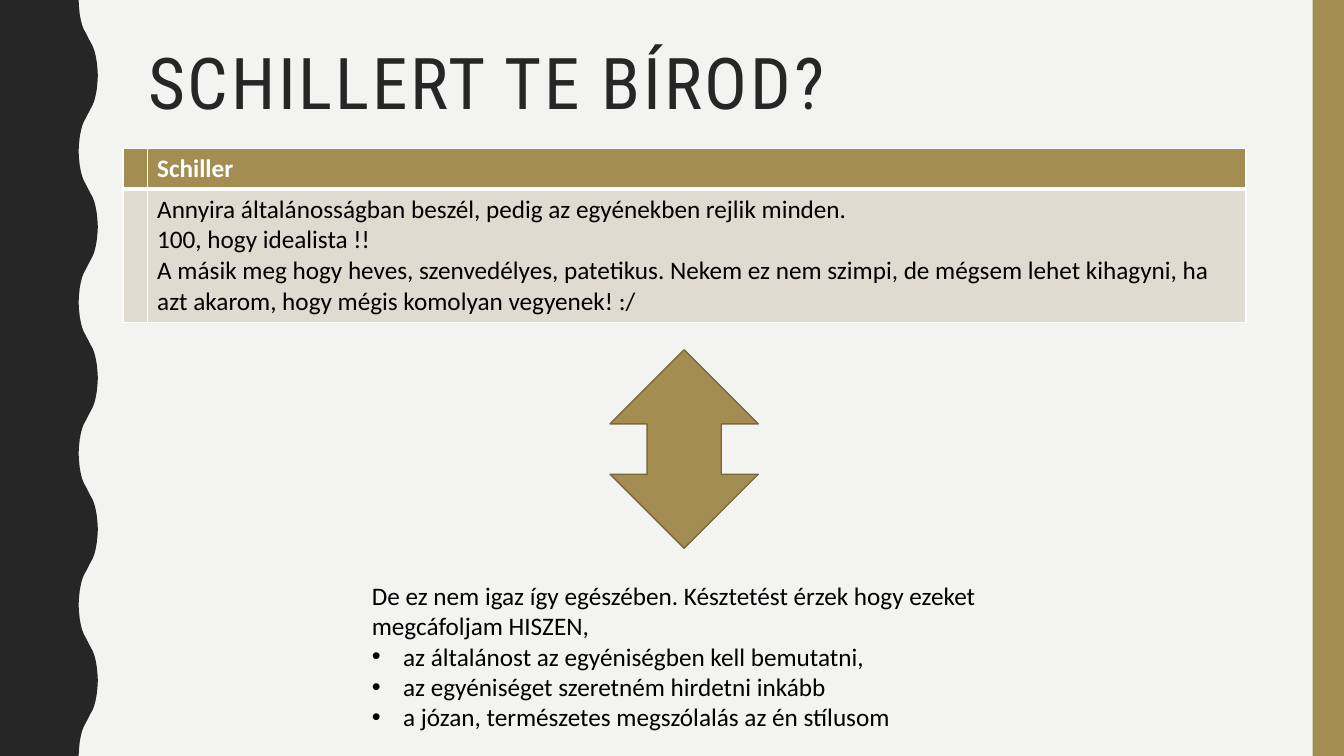
from pptx import Presentation
from pptx.dml.color import RGBColor
from pptx.enum.shapes import MSO_SHAPE
from pptx.enum.text import MSO_ANCHOR, PP_ALIGN
from pptx.oxml.ns import qn
from pptx.util import Inches, Pt
from lxml.etree import SubElement

WIDTH, HEIGHT = Inches(13.33), Inches(7.5)
GOLD, DARK, PAPER, SAND = "A38D51", "262626", "F3F3F2", "E0DBD0"
WHITE, BLACK, OUTLINE = "FFFFFF", "000000", "79683C"
BODY_FONT, TITLE_FONT = "Calibri", "Roboto Condensed"
WAVE_LEFT, WAVE_DEPTH, HALF_WAVES = 5.85, 1.43, 10
RISE = [(0, 0), (0.09, 0.02), (0.19, 0.06), (0.27, 0.12),
        (0.33, 0.18), (0.39, 0.27), (0.44, 0.38), (0.5, 0.5)]
OPINIONS = [
    "Annyira általánosságban beszél, pedig az egyénekben rejlik minden.",
    "100, hogy idealista !!",
    "A másik meg hogy heves, szenvedélyes, patetikus. Nekem ez nem szimpi, de mégsem "
    "lehet kihagyni, ha azt akarom, hogy mégis komolyan vegyenek! :/",
]
REPLY = "De ez nem igaz így egészében. Késztetést érzek hogy ezeket megcáfoljam HISZEN,"
REASONS = [
    "az általánost az egyéniségben kell bemutatni,",
    "az egyéniséget szeretném hirdetni inkább",
    "a józan, természetes megszólalás az én stílusom",
]


def across(percent):
    """Return a percentage of the slide width."""
    return round(WIDTH * percent / 100)


def down(percent):
    """Return a percentage of the slide height."""
    return round(HEIGHT * percent / 100)


def area(left, top, width, height):
    """Return a box given in percentages of the slide."""
    return across(left), down(top), across(width), down(height)


def paint(color_format, color):
    """Make a fill solid in a hex colour."""
    color_format.solid()
    color_format.fore_color.rgb = RGBColor.from_string(color)


def style_font(font, color, size=18, name=BODY_FONT, bold=False):
    """Set the look of a font."""
    font.name, font.size, font.bold = name, Pt(size), bold
    font.color.rgb = RGBColor.from_string(color)


def style_shape(shape, fill, line=None):
    """Give a shape a flat fill and an optional outline."""
    shape.shadow.inherit = False
    paint(shape.fill, fill)
    if line:
        paint(shape.line.fill, line)
        shape.line.width = Pt(1)
    else:
        shape.line.fill.background()


def add_preset(slide, kind, box, fill, line=None):
    """Add a preset shape."""
    style_shape(slide.shapes.add_shape(kind, *box), fill, line)


def add_wave_band(slide):
    """Add the dark left band with a wavy right edge."""
    half_wave = RISE + [(1 - step, 1 - depth) for step, depth in RISE[-2:0:-1]]
    pitch = 100 / HALF_WAVES
    edge = []
    for index in range(HALF_WAVES):
        for step, depth in half_wave:
            offset = 1 - depth if index % 2 else depth
            edge.append((across(WAVE_LEFT + WAVE_DEPTH * offset), down(pitch * (index + step))))
    edge += [(across(WAVE_LEFT), HEIGHT), (0, HEIGHT)]
    builder = slide.shapes.build_freeform(0, 0)
    builder.add_line_segments(edge, close=True)
    style_shape(builder.convert_to_shape(), DARK)


def format_title(slide, text):
    """Place and format the title placeholder."""
    title = slide.shapes.title
    title.left, title.top, title.width, title.height = area(10.28, 5.6, 83.5, 21.73)
    frame = title.text_frame
    frame.text = text
    frame.word_wrap = True
    frame.vertical_anchor = MSO_ANCHOR.TOP
    paragraph = frame.paragraphs[0]
    paragraph.alignment = PP_ALIGN.LEFT
    paragraph.line_spacing = 0.9
    run = paragraph.runs[0]
    style_font(run.font, DARK, 51, TITLE_FONT)
    run.font._element.set("spc", "200")


def add_borders(cell, bottom):
    """Draw white cell borders with a chosen bottom width."""
    properties = cell._tc.get_or_add_tcPr()
    for side, width in (("L", 1), ("R", 1), ("T", 1), ("B", bottom)):
        line = SubElement(properties, qn(f"a:ln{side}"), w=str(Pt(width)))
        SubElement(SubElement(line, qn("a:solidFill")), qn("a:srgbClr"), val=WHITE)


def add_opinion_table(slide):
    """Add the table with a header and one row of opinions."""
    table = slide.shapes.add_table(2, 2, *area(9.15, 19.6, 83.5, 22.93)).table
    for column, width in zip(table.columns, (1.73, 81.77)):
        column.width = across(width)
    rows = [(5.33, "Schiller", GOLD, WHITE, True, 3),
            (17.6, "\n".join(OPINIONS), SAND, BLACK, False, 1)]
    for row, (height, text, fill, color, bold, bottom) in zip(table.rows, rows):
        row.height = down(height)
        row.cells[1].text_frame.text = text
        for cell in row.cells:
            add_borders(cell, bottom)
            paint(cell.fill, fill)
            for paragraph in cell.text_frame.paragraphs:
                style_font(paragraph.font, color, bold=bold)
                for run in paragraph.runs:
                    style_font(run.font, color, bold=bold)


def add_bullet(paragraph):
    """Give a paragraph a hanging bullet."""
    properties = paragraph._p.get_or_add_pPr()
    indent = Inches(0.31)
    properties.set("marL", str(indent))
    properties.set("indent", str(-indent))
    SubElement(properties, qn("a:buFont"), typeface="Arial")
    SubElement(properties, qn("a:buChar"), char="•")


def add_reply(slide):
    """Add the reply with its bulleted reasons."""
    frame = slide.shapes.add_textbox(*area(26.93, 76.13, 50.11, 21.6)).text_frame
    frame.word_wrap = True
    frame.text = "\n".join([REPLY, *REASONS])
    for paragraph in frame.paragraphs[1:]:
        add_bullet(paragraph)
    for paragraph in frame.paragraphs:
        style_font(paragraph.runs[0].font, BLACK)


def main():
    """Build and save the slide."""
    presentation = Presentation()
    presentation.slide_width, presentation.slide_height = WIDTH, HEIGHT
    slide = presentation.slides.add_slide(presentation.slide_layouts[5])
    paint(slide.background.fill, PAPER)
    add_wave_band(slide)
    add_preset(slide, MSO_SHAPE.RECTANGLE, area(97.67, 0, 2.33, 100), GOLD)
    format_title(slide, "SCHILLERT TE BÍROD?")
    add_opinion_table(slide)
    add_preset(slide, MSO_SHAPE.UP_DOWN_ARROW, area(45.39, 46.27, 11.03, 26.27), GOLD, OUTLINE)
    add_reply(slide)
    presentation.save("out.pptx")


if __name__ == "__main__":
    main()
